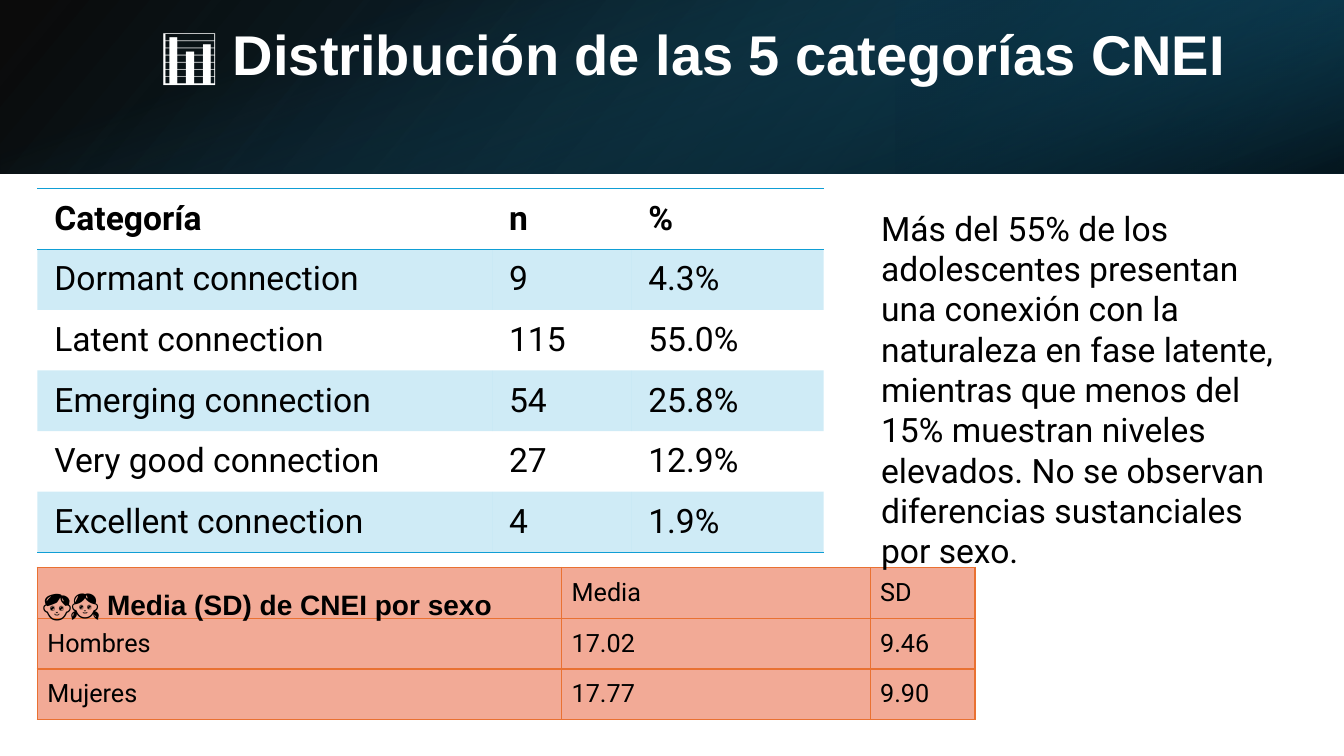
from dataclasses import dataclass
from lxml.etree import SubElement
from pptx import Presentation
from pptx.dml.color import RGBColor
from pptx.enum.shapes import MSO_SHAPE
from pptx.enum.text import MSO_ANCHOR, PP_ALIGN
from pptx.oxml import parse_xml
from pptx.oxml.ns import nsdecls, qn
from pptx.util import Inches, Pt

# Content
TITLE = "📊 Distribución de las 5 categorías CNEI"
CATEGORIES = [
    ("Categoría", "n", "%"),
    ("Dormant connection", "9", "4.3%"),
    ("Latent connection", "115", "55.0%"),
    ("Emerging connection", "54", "25.8%"),
    ("Very good connection", "27", "12.9%"),
    ("Excellent connection", "4", "1.9%"),
]
MEANS_HEADING = "👦👧 Media (SD) de CNEI por sexo"
MEANS = [
    ("", "Media", "SD"),
    ("Hombres", "17.02", "9.46"),
    ("Mujeres", "17.77", "9.90"),
]
FINDING = (
    "Más del 55% de los adolescentes presentan una conexión con la naturaleza "
    "en fase latente, mientras que menos del 15% muestran niveles elevados. "
    "No se observan diferencias sustanciales por sexo."
)


@dataclass(frozen=True)
class Theme:
    heading_font: str = "Arial"
    body_font: str = "Roboto"
    title_size: int = 40
    body_size: int = 24
    heading_size: int = 20
    small_size: int = 18
    white: str = "FFFFFF"
    black: str = "000000"
    blue: str = "0F9ED5"
    orange: str = "E97132"
    salmon: str = "F2AA96"
    teal: str = "156082"
    deep_teal: str = "104862"
    navy: str = "0B3041"


THEME = Theme()

# Layout grid, in inches
WIDTH, HEIGHT = 13.33, 7.5
BANNER = 1.72
LEFT = 0.37
CATEGORY_COLUMNS, CATEGORY_ROW = (4.51, 1.38, 1.91), 3.61 / 6
MEANS_COLUMNS, MEANS_ROW = (5.2, 3.06, 1.04), 1.51 / 3
NO_STYLE = "{2D5ABB26-0587-4C30-8999-92F81FD0307C}"

# Banner layers: box, rotation, mirrored, gradient angle, stops (position, colour, opacity)
BANNER_LAYERS = [
    ((0, 0, WIDTH, BANNER), 0, True, 140,
     [(0, THEME.black, 96), (100, THEME.deep_teal, 100)]),
    ((WIDTH * 2 / 3, 0, WIDTH / 3, BANNER), 180, True, 320,
     [(19, THEME.navy, 68), (100, THEME.teal, 79)]),
    (((WIDTH - BANNER) / 2, (BANNER - WIDTH) / 2, BANNER, WIDTH), 90, False, 340,
     [(23, THEME.teal, 0), (99, THEME.black, 74)]),
]


def add_banner_layer(slide, box, rotation, mirrored, angle, stops):
    shape = slide.shapes.add_shape(MSO_SHAPE.RECTANGLE, *map(Inches, box))
    shape.rotation = rotation
    shape.shadow.inherit = False
    shape.line.fill.background()
    properties = shape._element.spPr
    if mirrored:
        properties.find(qn("a:xfrm")).set("flipH", "1")
    stop_xml = "".join(
        f'<a:gs pos="{position * 1000}"><a:srgbClr val="{color}">'
        f'<a:alpha val="{opacity * 1000}"/></a:srgbClr></a:gs>'
        for position, color, opacity in stops
    )
    gradient = parse_xml(
        f'<a:gradFill {nsdecls("a")} rotWithShape="1"><a:gsLst>{stop_xml}</a:gsLst>'
        f'<a:lin ang="{angle * 60000}" scaled="0"/></a:gradFill>'
    )
    properties.find(qn("a:prstGeom")).addnext(gradient)


def write(paragraph, text, font, size, color=THEME.black, bold=False):
    paragraph.alignment = PP_ALIGN.LEFT
    run = paragraph.add_run()
    run.text = text
    run.font.name, run.font.size, run.font.bold = font, Pt(size), bold
    run.font.color.rgb = RGBColor.from_string(color)


def add_text(slide, box, anchor, text, *style):
    frame = slide.shapes.add_textbox(*map(Inches, box)).text_frame
    frame.word_wrap = True
    frame.vertical_anchor = anchor
    write(frame.paragraphs[0], text, *style)
    return frame


def add_borders(cell, sides, color):
    properties = cell._tc.get_or_add_tcPr()
    for index, side in enumerate(sides):
        line = parse_xml(
            f'<a:ln{side} {nsdecls("a")} w="12700"><a:solidFill>'
            f'<a:srgbClr val="{color}"/></a:solidFill></a:ln{side}>'
        )
        properties.insert(index, line)


def fill_cell(cell, color, opacity=100):
    cell.fill.solid()
    cell.fill.fore_color.rgb = RGBColor.from_string(color)
    if opacity < 100:
        srgb = cell._tc.tcPr.find(".//" + qn("a:srgbClr"))
        SubElement(srgb, qn("a:alpha")).set("val", str(opacity * 1000))


def add_plain_table(slide, top, rows, columns, row_height, size, bold_header):
    """Add an unstyled table and yield each cell with its row number."""
    frame = slide.shapes.add_table(
        len(rows), len(columns), Inches(LEFT), Inches(top),
        Inches(sum(columns)), Inches(row_height * len(rows)),
    )
    table = frame.table
    table.first_row = table.horz_banding = False
    table._tbl.tblPr.find(qn("a:tableStyleId")).text = NO_STYLE
    for column, width in zip(table.columns, columns):
        column.width = Inches(width)
    for row_number, values in enumerate(rows):
        table.rows[row_number].height = Inches(row_height)
        for column_number, value in enumerate(values):
            cell = table.cell(row_number, column_number)
            cell.vertical_anchor = MSO_ANCHOR.MIDDLE
            if value:
                write(cell.text_frame.paragraphs[0], value, THEME.body_font, size,
                      THEME.black, bold_header and row_number == 0)
            yield row_number, cell


def main():
    presentation = Presentation()
    presentation.slide_width, presentation.slide_height = Inches(WIDTH), Inches(HEIGHT)
    slide = presentation.slides.add_slide(presentation.slide_layouts[6])

    # Banner and title
    for layer in BANNER_LAYERS:
        add_banner_layer(slide, *layer)
    title = add_text(slide, (1.5, 0.38, 10.98, 0.96), MSO_ANCHOR.MIDDLE, TITLE,
                     THEME.heading_font, THEME.title_size, THEME.white, True)
    title.margin_bottom = Inches(0.62)
    title.paragraphs[0].line_spacing = 0.9

    # Category table: banded rows, rules around the header and below the last row
    for row_number, cell in add_plain_table(slide, 1.87, CATEGORIES, CATEGORY_COLUMNS,
                                            CATEGORY_ROW, THEME.body_size, True):
        cell.margin_left = cell.margin_right = Inches(0.17)
        cell.margin_top = cell.margin_bottom = Inches(0.09)
        if row_number % 2:
            fill_cell(cell, THEME.blue, 20)
        else:
            cell.fill.background()
        if row_number == 0:
            add_borders(cell, "TB", THEME.blue)
        elif row_number == len(CATEGORIES) - 1:
            add_borders(cell, "B", THEME.blue)

    # Means by sex
    for row_number, cell in add_plain_table(slide, 5.63, MEANS, MEANS_COLUMNS,
                                            MEANS_ROW, THEME.small_size, False):
        fill_cell(cell, THEME.salmon)
        add_borders(cell, "LRTB", THEME.orange)
    add_text(slide, (0.33, 5.75, WIDTH - 0.33, 0.5), MSO_ANCHOR.MIDDLE, MEANS_HEADING,
             THEME.heading_font, THEME.heading_size, THEME.black, True)

    # Finding
    add_text(slide, (8.64, 2.01, 4.32, 3.7), MSO_ANCHOR.TOP, FINDING,
             THEME.body_font, THEME.body_size)

    presentation.save("out.pptx")


if __name__ == "__main__":
    main()
